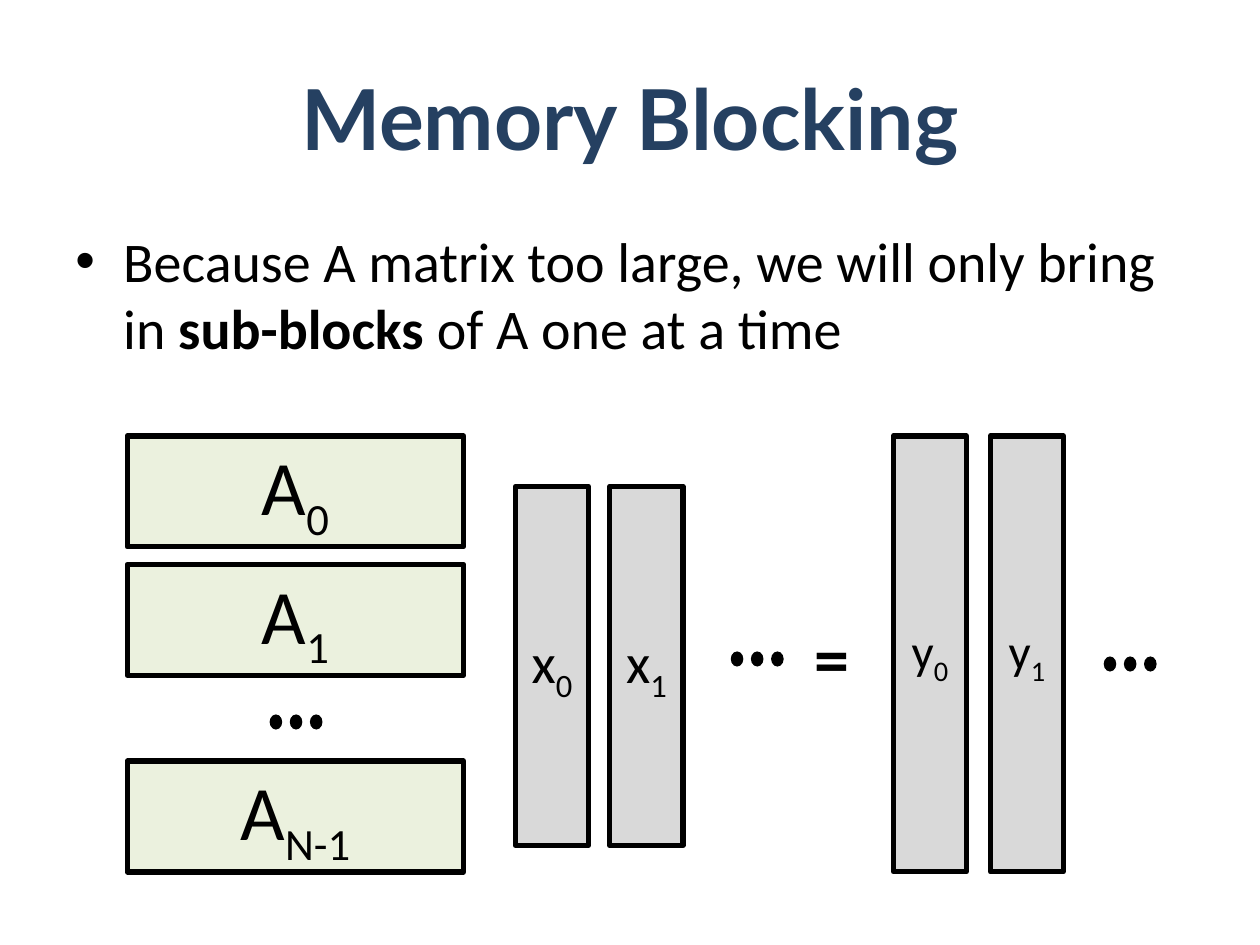
import pptx
import pptx.util
import pptx.dml.color
import pptx.enum.shapes
import pptx.enum.text
import lxml.etree

Inches, Pt = pptx.util.Inches, pptx.util.Pt
RGBColor = pptx.dml.color.RGBColor
MSO_SHAPE = pptx.enum.shapes.MSO_SHAPE
PP_ALIGN, MSO_ANCHOR = pptx.enum.text.PP_ALIGN, pptx.enum.text.MSO_ANCHOR

NAVY = RGBColor(0x25, 0x40, 0x61)
BLACK = RGBColor(0, 0, 0)
GREEN = RGBColor(0xEB, 0xF1, 0xDE)
GREY = RGBColor(0xD9, 0xD9, 0xD9)

TOP, BOTTOM = 3.46, 6.92
ROW_H = 0.88
COL_W = 0.58
DOT_W, DOT_H, DOT_STEP = 0.1, 0.12, 0.16


def add_run(p, text, size, bold=False, color=BLACK, font="Calibri"):
    r = p.add_run()
    r.text = text
    r.font.name, r.font.size, r.font.bold = font, Pt(size), bold
    r.font.color.rgb = color
    return r


def add_block(x, y, w, h, fill, name, index, size):
    """Add an outlined rectangle labelled with a name and a subscript."""
    sp = s.shapes.add_shape(MSO_SHAPE.RECTANGLE, Inches(x), Inches(y), Inches(w), Inches(h))
    sp.shadow.inherit = False
    sp.fill.solid()
    sp.fill.fore_color.rgb = fill
    sp.line.color.rgb = BLACK
    sp.line.width = Pt(3)
    tf = sp.text_frame
    tf.vertical_anchor = MSO_ANCHOR.MIDDLE
    p = tf.paragraphs[0]
    p.alignment = PP_ALIGN.CENTER
    add_run(p, name, size)
    r = add_run(p, index, size)
    r.font._element.set("baseline", "-25000")


prs = pptx.Presentation()
prs.slide_width, prs.slide_height = Inches(10), Inches(7.5)
s = prs.slides.add_slide(prs.slide_layouts[6])

# Title
tf = s.shapes.add_textbox(Inches(0.5), Inches(0.3), Inches(9), Inches(1.25)).text_frame
tf.word_wrap = True
tf.vertical_anchor = MSO_ANCHOR.MIDDLE
p = tf.paragraphs[0]
p.alignment = PP_ALIGN.CENTER
add_run(p, "Memory Blocking", 48, True, NAVY, "Lato")

# Bullet
tf = s.shapes.add_textbox(Inches(0.5), Inches(1.75), Inches(9), Inches(4.95)).text_frame
tf.word_wrap = True
p = tf.paragraphs[0]
p.space_before = Pt(6.4)
pPr = p._p.get_or_add_pPr()
pPr.set("marL", str(Inches(0.38)))
pPr.set("indent", str(-Inches(0.38)))
for tag, attr, value in (("a:buFont", "typeface", "Arial"), ("a:buChar", "char", "•")):
    lxml.etree.SubElement(pPr, pptx.oxml.ns.qn(tag)).set(attr, value)
add_run(p, "Because A matrix too large, we will only bring in ", 32)
add_run(p, "sub-blocks", 32, True)
add_run(p, " of A one at a time", 32)

# Row blocks of matrix A
for index, y in (("0", TOP), ("1", 4.48), ("N-1", BOTTOM - ROW_H)):
    add_block(1.01, y, 2.67, ROW_H, GREEN, "A", index, 44)

# Column vectors x and y
for name, left, step, top, height, size in (
    ("x", 4.09, 0.75, 3.86, 2.85, 32),
    ("y", 7.09, 0.77, TOP, BOTTOM - TOP, 28),
):
    for i in range(2):
        add_block(left + i * step, top, COL_W, height, GREY, name, str(i), size)

# Equals sign
tf = s.shapes.add_textbox(Inches(6.36), Inches(4.83), Inches(0.48), Inches(0.77)).text_frame
tf.word_wrap = False
p = tf.paragraphs[0]
p.alignment = PP_ALIGN.CENTER
add_run(p, "=", 40, True)

# Ellipses, each a group of three dots
for x, y in ((5.8, 5.17), (8.76, 5.21), (2.14, 5.67)):
    group = s.shapes.add_group_shape()
    for i in range(3):
        dot = group.shapes.add_shape(MSO_SHAPE.OVAL, Inches(x + i * DOT_STEP), Inches(y),
                                     Inches(DOT_W), Inches(DOT_H))
        dot.shadow.inherit = False
        dot.fill.solid()
        dot.fill.fore_color.rgb = BLACK
        dot.line.fill.background()

prs.save("out.pptx")
